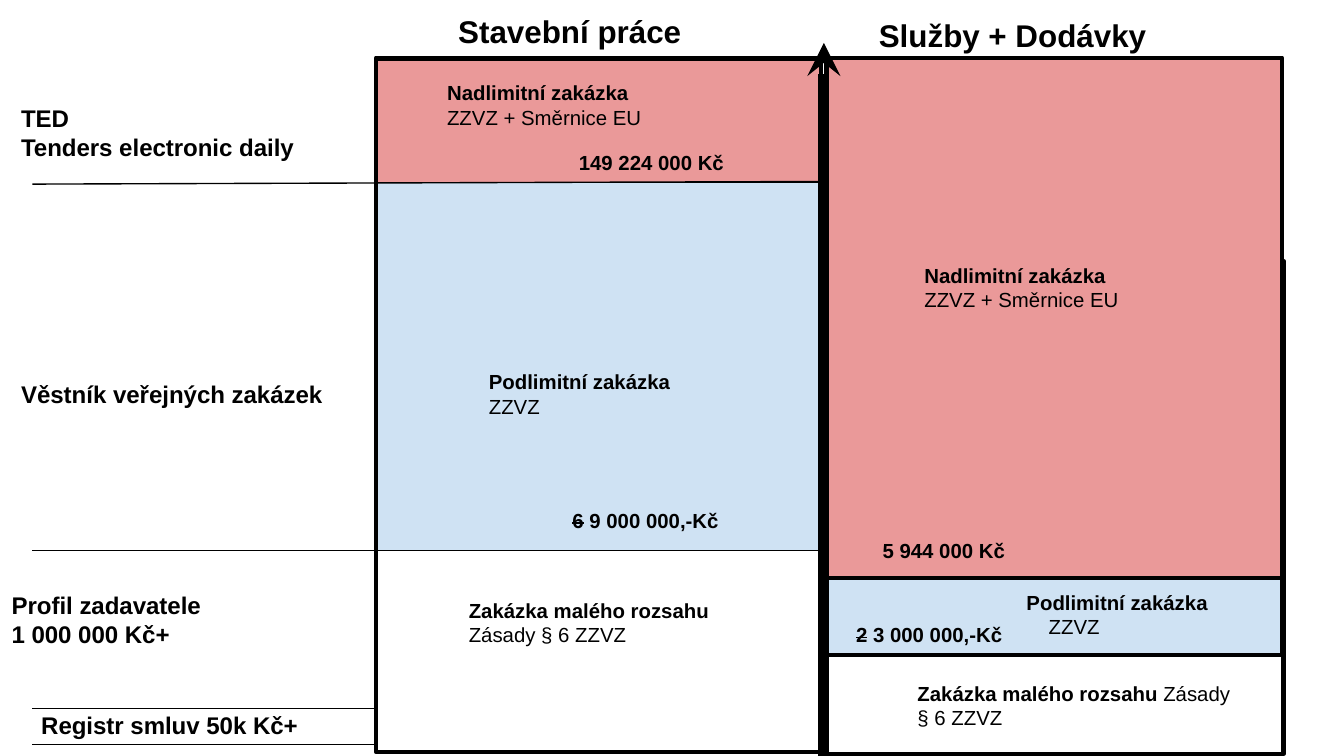
from dataclasses import dataclass

from lxml.etree import SubElement
from pptx import Presentation
from pptx.dml.color import RGBColor
from pptx.enum.shapes import MSO_CONNECTOR, MSO_SHAPE
from pptx.enum.text import MSO_ANCHOR, MSO_AUTO_SIZE, PP_ALIGN
from pptx.oxml.ns import qn
from pptx.slide import Slide
from pptx.text.text import TextFrame
from pptx.util import Cm, Pt


@dataclass(frozen=True)
class Theme:
    font: str = "Arial"
    ink: str = "000000"
    paper: str = "FFFFFF"
    above_limit: str = "EA9999"
    below_limit: str = "CFE2F3"
    heading: float = 16.8
    register: float = 12.9
    body: float = 10.9
    thin: float = 0.75
    border: float = 2.23
    axis: float = 5.94


@dataclass(frozen=True)
class Span:
    text: str
    bold: bool = True
    strike: bool = False


@dataclass(frozen=True)
class Frame:
    left: float
    top: float
    width: float
    height: float


@dataclass(frozen=True)
class Band:
    frame: Frame
    fill: str
    border: float


@dataclass(frozen=True)
class Label:
    frame: Frame
    paras: list[list[Span]]
    size: float
    last_indent: float = 0


@dataclass(frozen=True)
class Rule:
    left: float
    top: float
    right: float
    bottom: float


THEME = Theme()

BANDS = [
    Band(Frame(15.6, 4.93, 8.66, 9.32), THEME.paper, THEME.border),
    Band(Frame(15.62, 10.92, 8.61, 1.47), THEME.below_limit, THEME.border),
    Band(Frame(15.62, 1.09, 8.61, 9.83), THEME.above_limit, THEME.border),
    Band(Frame(7.11, 1.09, 8.41, 13.13), THEME.paper, THEME.border),
    Band(Frame(7.14, 1.14, 8.36, 4.55), THEME.above_limit, THEME.thin),
    Band(Frame(7.14, 3.45, 8.36, 6.96), THEME.below_limit, THEME.thin),
]

ABOVE = [[Span("Nadlimitní zakázka")], [Span("ZZVZ + Směrnice EU", bold=False)]]
BELOW = [[Span("Podlimitní zakázka")], [Span("ZZVZ", bold=False)]]
SMALL = [[Span("Zakázka malého rozsahu"), Span(" Zásady § 6 ZZVZ", bold=False)]]

LABELS = [
    Label(Frame(16.36, 0.05, 8.9, 1.47), [[Span("Služby + Dodávky")]], THEME.heading),
    Label(Frame(17.22, 4.72, 6.35, 1.8), ABOVE, THEME.body),
    Label(Frame(19.15, 10.9, 5.44, 1.8), BELOW, THEME.body, 0.42),
    Label(Frame(17.09, 12.62, 6.65, 1.47), SMALL, THEME.body),
    Label(Frame(8.2, 1.27, 6.35, 1.8), ABOVE, THEME.body),
    Label(Frame(8.99, 6.73, 5.21, 1.8), BELOW, THEME.body),
    Label(Frame(8.61, 11.05, 6.35, 1.8), SMALL, THEME.body),
    Label(Frame(16.43, 9.93, 5, 0.76), [[Span("5 944 000 Kč")]], THEME.body),
    Label(Frame(15.93, 11.51, 3.99, 0.53),
          [[Span("2", strike=True), Span(" 3 000 000,-Kč")]], THEME.body),
    Label(Frame(10.69, 2.59, 4.62, 0.76), [[Span("149 224 000 Kč")]], THEME.body),
    Label(Frame(10.57, 9.35, 4.62, 0.76),
          [[Span("6", strike=True), Span(" 9 000 000,-Kč")]], THEME.body),
    Label(Frame(0.15, 1.7, 8.05, 0.53),
          [[Span("TED")], [Span("Tenders electronic daily")]], THEME.register),
    Label(Frame(0.15, 6.93, 8.05, 0.53), [[Span("Věstník veřejných zakázek")]], THEME.register),
    Label(Frame(-0.03, 10.92, 11.23, 0.53),
          [[Span("Profil zadavatele")], [Span("1 000 000 Kč+")]], THEME.register),
    Label(Frame(0.53, 13.18, 5.74, 0.53), [[Span("Registr smluv 50k Kč+")]], THEME.register),
]

HEADING = Label(Frame(8.41, -0.03, 8.41, 1.12), [[Span("Stavební práce")]], THEME.heading)

AXIS = Rule(15.57, 0.81, 15.57, 14.29)
RULES = [
    Rule(0.61, 3.48, 15.65, 3.43),
    Rule(0.61, 10.41, 15.65, 10.41),
    Rule(0.61, 13.39, 7.11, 13.39),
    Rule(0.61, 14.07, 7.14, 14.07),
]


def lengths(frame: Frame) -> tuple[Cm, Cm, Cm, Cm]:
    return Cm(frame.left), Cm(frame.top), Cm(frame.width), Cm(frame.height)


def write_text(text_frame: TextFrame, paras: list[list[Span]], *,
               size: float, last_indent: float = 0) -> None:
    text_frame.word_wrap = True
    text_frame.auto_size = MSO_AUTO_SIZE.NONE
    text_frame.vertical_anchor = MSO_ANCHOR.TOP
    text_frame.margin_left = text_frame.margin_right = Cm(0.25)
    text_frame.margin_top = text_frame.margin_bottom = Cm(0.25)
    for index, spans in enumerate(paras):
        para = text_frame.add_paragraph() if index else text_frame.paragraphs[0]
        para.alignment = PP_ALIGN.LEFT
        if last_indent and index == len(paras) - 1:
            para._p.get_or_add_pPr().set("marL", str(Cm(last_indent)))
        for span in spans:
            run = para.add_run()
            run.text = span.text
            run.font.name = THEME.font
            run.font.size = Pt(size)
            run.font.bold = span.bold
            run.font.color.rgb = RGBColor.from_string(THEME.ink)
            if span.strike:
                run.font._element.set("strike", "sngStrike")


def draw_band(page: Slide, band: Band) -> None:
    box = page.shapes.add_shape(MSO_SHAPE.RECTANGLE, *lengths(band.frame))
    box.shadow.inherit = False
    box.fill.solid()
    box.fill.fore_color.rgb = RGBColor.from_string(band.fill)
    box.line.color.rgb = RGBColor.from_string(THEME.ink)
    box.line.width = Pt(band.border)


def draw_label(page: Slide, label: Label) -> None:
    box = page.shapes.add_textbox(*lengths(label.frame))
    write_text(box.text_frame, label.paras, size=label.size, last_indent=label.last_indent)


def draw_heading(page: Slide, label: Label) -> None:
    title = page.shapes.title
    title.left, title.top, title.width, title.height = lengths(label.frame)
    write_text(title.text_frame, label.paras, size=label.size)


def draw_rule(page: Slide, rule: Rule, width: float, arrow: bool = False) -> None:
    connector = page.shapes.add_connector(
        MSO_CONNECTOR.STRAIGHT, Cm(rule.left), Cm(rule.top), Cm(rule.right), Cm(rule.bottom))
    connector.line.color.rgb = RGBColor.from_string(THEME.ink)
    connector.line.width = Pt(width)
    properties = connector._element.spPr
    if arrow:
        SubElement(properties.find(qn("a:ln")), qn("a:headEnd"), type="stealth")
    SubElement(properties, qn("a:effectLst"))


def main() -> None:
    deck = Presentation()
    deck.slide_width, deck.slide_height = Cm(25.4), Cm(14.29)
    page = deck.slides.add_slide(deck.slide_layouts[5])
    draw_heading(page, HEADING)
    for band in BANDS:
        draw_band(page, band)
    draw_rule(page, AXIS, THEME.axis, arrow=True)
    for rule in RULES:
        draw_rule(page, rule, THEME.thin)
    for label in LABELS:
        draw_label(page, label)
    deck.save("out.pptx")


if __name__ == "__main__":
    main()
